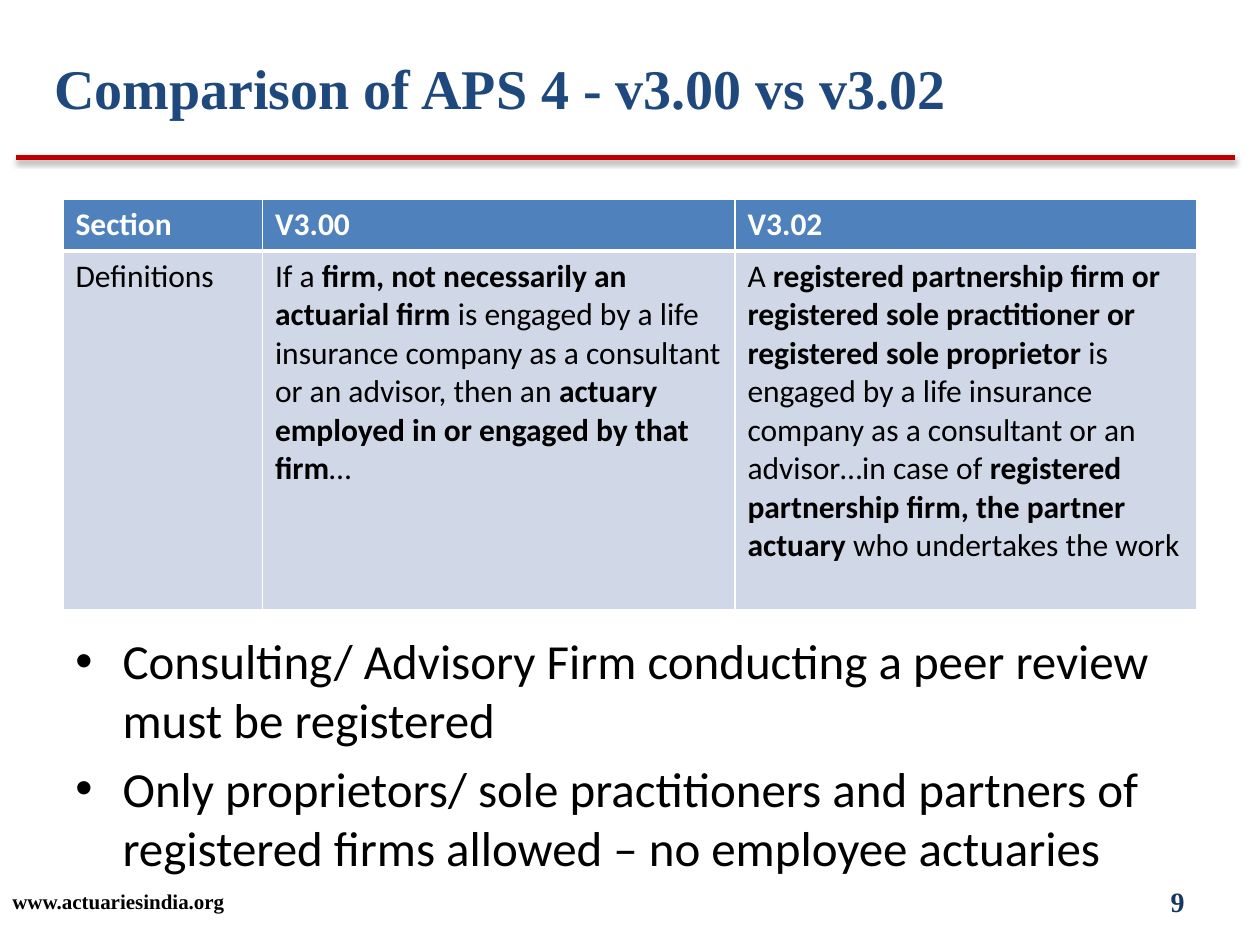
from lxml import etree
from pptx import Presentation
from pptx.dml.color import RGBColor
from pptx.enum import shapes, text
from pptx.oxml import ns, parse_xml
from pptx.util import Pt

RED = RGBColor(0xC0, 0x00, 0x00)
BLACK = RGBColor(0x00, 0x00, 0x00)
WHITE = RGBColor(0xFF, 0xFF, 0xFF)
NAVY = RGBColor(0x1F, 0x49, 0x7D)
DARK_NAVY = RGBColor(0x17, 0x37, 0x5E)
HEADER_BLUE = RGBColor(0x4F, 0x81, 0xBD)
BODY_BLUE = RGBColor(0xD0, 0xD8, 0xE8)
SERIF, SANS = "Times New Roman", "Calibri"

TITLE = "Comparison of APS 4 - v3.00 vs v3.02"
BULLETS = [
    "Consulting/ Advisory Firm conducting a peer review must be registered",
    "Only proprietors/ sole practitioners and partners of registered firms allowed – no employee actuaries",
]
HEADERS = ["Section", "V3.00", "V3.02"]
DEFINITIONS = [
    [[("Definitions", False)]],
    [[
        ("If a ", False),
        ("firm, not necessarily an actuarial firm ", True),
        ("is engaged by a life insurance company as a consultant or an advisor, then an ", False),
        ("actuary employed in or engaged by that firm", True),
        ("…", False),
    ]],
    [
        [("A ", False),
         ("registered partnership firm or registered sole practitioner or", True)],
        [("registered sole proprietor", True),
         (" is engaged by a life insurance", False)],
        [("company as a consultant or an advisor…in case of ", False),
         ("registered partnership firm, the partner actuary", True),
         (" who undertakes the work", False)],
    ],
]
ROWS = [[[[(header, True)]] for header in HEADERS], DEFINITIONS]
ROW_STYLES = [(HEADER_BLUE, WHITE, 3), (BODY_BLUE, BLACK, 1)]
COLUMN_WIDTHS = [114, 270, 264]
ROW_HEIGHTS = [29.5, 205]
SHADOW = (
    f'<a:effectLst {ns.nsdecls("a")}><a:outerShdw blurRad="{Pt(3.1)}" dist="{Pt(1.6)}" '
    'dir="5400000" rotWithShape="0"><a:srgbClr val="000000"><a:alpha val="38000"/>'
    '</a:srgbClr></a:outerShdw></a:effectLst>'
)


def style(font, name, size, color, bold=False):
    font.name, font.size, font.bold = name, Pt(size), bold
    font.color.rgb = color


def add_text(page, place, lines, name, size, color, bold=False,
             anchor=text.MSO_ANCHOR.TOP, align=text.PP_ALIGN.LEFT, bullet=False):
    frame = page.shapes.add_textbox(*map(Pt, place)).text_frame
    frame.word_wrap = True
    frame.vertical_anchor = anchor
    frame.text = "\n".join(lines)
    for index, para in enumerate(frame.paragraphs):
        para.alignment = align
        if index:
            para.space_before = Pt(size * 0.2)
        if bullet:
            properties = para._p.get_or_add_pPr()
            properties.set("marL", str(Pt(27)))
            properties.set("indent", str(Pt(-27)))
            etree.SubElement(properties, ns.qn("a:buFont"), typeface="Arial")
            etree.SubElement(properties, ns.qn("a:buChar"), char="•")
        for span in para.runs:
            style(span.font, name, size, color, bold)


def set_borders(cell, bottom):
    properties = cell._tc.get_or_add_tcPr()
    widths = {"lnL": 1, "lnR": 1, "lnT": 1, "lnB": bottom}
    for index, (side, width) in enumerate(widths.items()):
        properties.insert(index, parse_xml(
            f'<a:{side} {ns.nsdecls("a")} w="{Pt(width)}"><a:solidFill>'
            f'<a:srgbClr val="{WHITE}"/></a:solidFill></a:{side}>'))


def add_comparison(page):
    table = page.shapes.add_table(
        len(ROWS), len(HEADERS), Pt(36), Pt(114),
        Pt(sum(COLUMN_WIDTHS)), Pt(sum(ROW_HEIGHTS))).table
    for column, width in zip(table.columns, COLUMN_WIDTHS):
        column.width = Pt(width)
    for row, height, contents, (fill, color, bottom) in zip(
            table.rows, ROW_HEIGHTS, ROWS, ROW_STYLES):
        row.height = Pt(height)
        for cell, paragraphs in zip(row.cells, contents):
            cell.fill.solid()
            cell.fill.fore_color.rgb = fill
            set_borders(cell, bottom)
            frame = cell.text_frame
            for index, spans in enumerate(paragraphs):
                para = frame.add_paragraph() if index else frame.paragraphs[0]
                for words, bold in spans:
                    span = para.add_run()
                    span.text = words
                    style(span.font, SANS, 18, color, bold)


def main():
    deck = Presentation()
    deck.slide_width, deck.slide_height = Pt(720), Pt(540)
    page = deck.slides.add_slide(deck.slide_layouts[6])

    rule = page.shapes.add_connector(
        shapes.MSO_CONNECTOR.STRAIGHT, Pt(9.4), Pt(90), Pt(705.6), Pt(90))
    rule.line.color.rgb = RED
    rule.line.width = Pt(3)
    rule._element.spPr.append(parse_xml(SHADOW))

    middle = text.MSO_ANCHOR.MIDDLE
    add_text(page, (0, 500.4, 720, 28.8), ["www.actuariesindia.org"],
             SERIF, 12, BLACK, True, middle)
    add_text(page, (516, 500.4, 168, 28.8), ["9"],
             SERIF, 16, DARK_NAVY, True, middle, text.PP_ALIGN.RIGHT)
    add_text(page, (24, 27, 576, 48), [TITLE], SERIF, 32, NAVY, True)
    add_comparison(page)
    add_text(page, (36, 357, 648, 177), BULLETS, SANS, 28, BLACK, bullet=True)
    deck.save("out.pptx")


if __name__ == "__main__":
    main()
